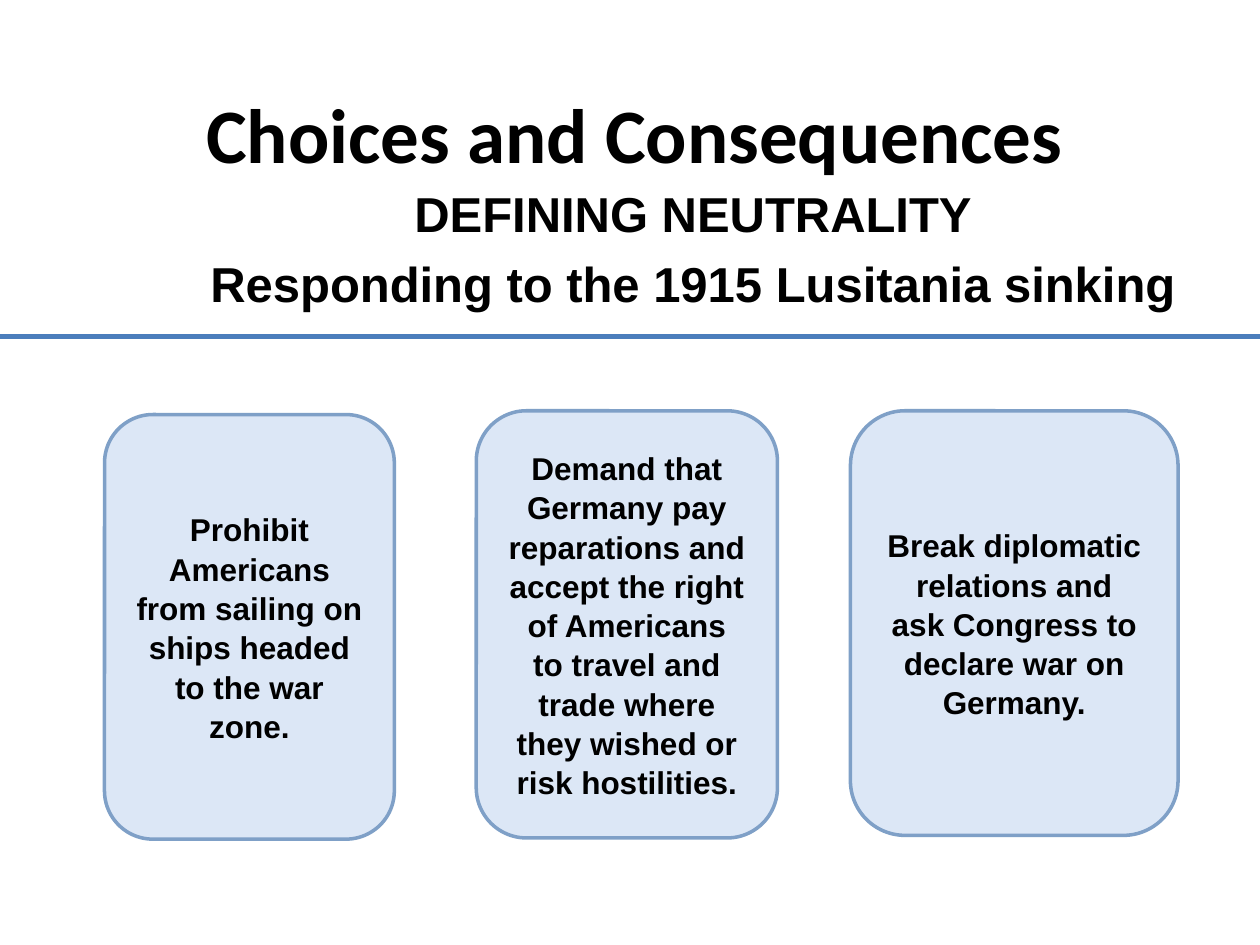
from lxml import etree
from pptx import Presentation, util as u
from pptx.dml.color import RGBColor
from pptx.enum import shapes, text
from pptx.oxml import ns

deck = Presentation()
deck.slide_width, deck.slide_height = u.Inches(10), u.Inches(7.5)
page = deck.slides.add_slide(deck.slide_layouts[6])


def share(left, top, width, height):
    across, down = deck.slide_width / 100, deck.slide_height / 100
    return [int(n) for n in (left * across, top * down, width * across, height * down)]


def write(box, lines, font, size, anchor, before=0, spacing=1):
    frame = box.text_frame
    frame.word_wrap = True
    frame.vertical_anchor = anchor
    for number, line in enumerate(lines):
        para = frame.add_paragraph() if number else frame.paragraphs[0]
        para.alignment = text.PP_ALIGN.CENTER
        para.line_spacing = spacing
        if number:
            para.space_before = u.Pt(before)
        span = para.add_run()
        span.text = line
        span.font.name = font
        span.font.size = u.Pt(size)
        span.font.bold = True
        span.font.color.rgb = RGBColor.from_string("000000")


title = page.shapes.add_textbox(*share(5.4, 6.4, 90, 15.33))
write(title, ["Choices and Consequences"], "Calibri", 44, text.MSO_ANCHOR.MIDDLE)

subtitle = page.shapes.add_textbox(*share(10, 18.8, 90, 14.5))
write(subtitle, ["DEFINING NEUTRALITY", "Responding to the 1915 Lusitania sinking"],
      "Arial", 28, text.MSO_ANCHOR.TOP, before=6.4)

left, top, width, height = share(0, 35.6, 100, 0)
rule = page.shapes.add_connector(shapes.MSO_CONNECTOR.STRAIGHT, left, top, left + width, top + height)
rule.line.color.rgb = RGBColor.from_string("4B7EBC")
rule.line.width = u.Pt(3)
etree.SubElement(rule._element.spPr, ns.qn("a:effectLst"))

choices = [
    ((8.3, 43.87, 23, 44.93),
     ["Prohibit Americans", "from sailing on ships headed to the war", "zone."]),
    ((37.8, 43.47, 23.9, 45.2),
     ["Demand that", "Germany pay", "reparations and", "accept the right", "of Americans",
      "to travel and", "trade where they wished or risk hostilities."]),
    ((67.5, 43.47, 26, 44.93),
     ["Break diplomatic", "relations and", "ask Congress to", "declare war on", "Germany."]),
]
for place, lines in choices:
    card = page.shapes.add_shape(shapes.MSO_SHAPE.ROUNDED_RECTANGLE, *share(*place))
    card.shadow.inherit = False
    card.fill.solid()
    card.fill.fore_color.rgb = RGBColor.from_string("DCE7F6")
    card.line.color.rgb = RGBColor.from_string("7FA0C7")
    card.line.width = u.Pt(2)
    write(card, lines, "Arial", 18, text.MSO_ANCHOR.MIDDLE, spacing=1.04)

deck.save("out.pptx")
